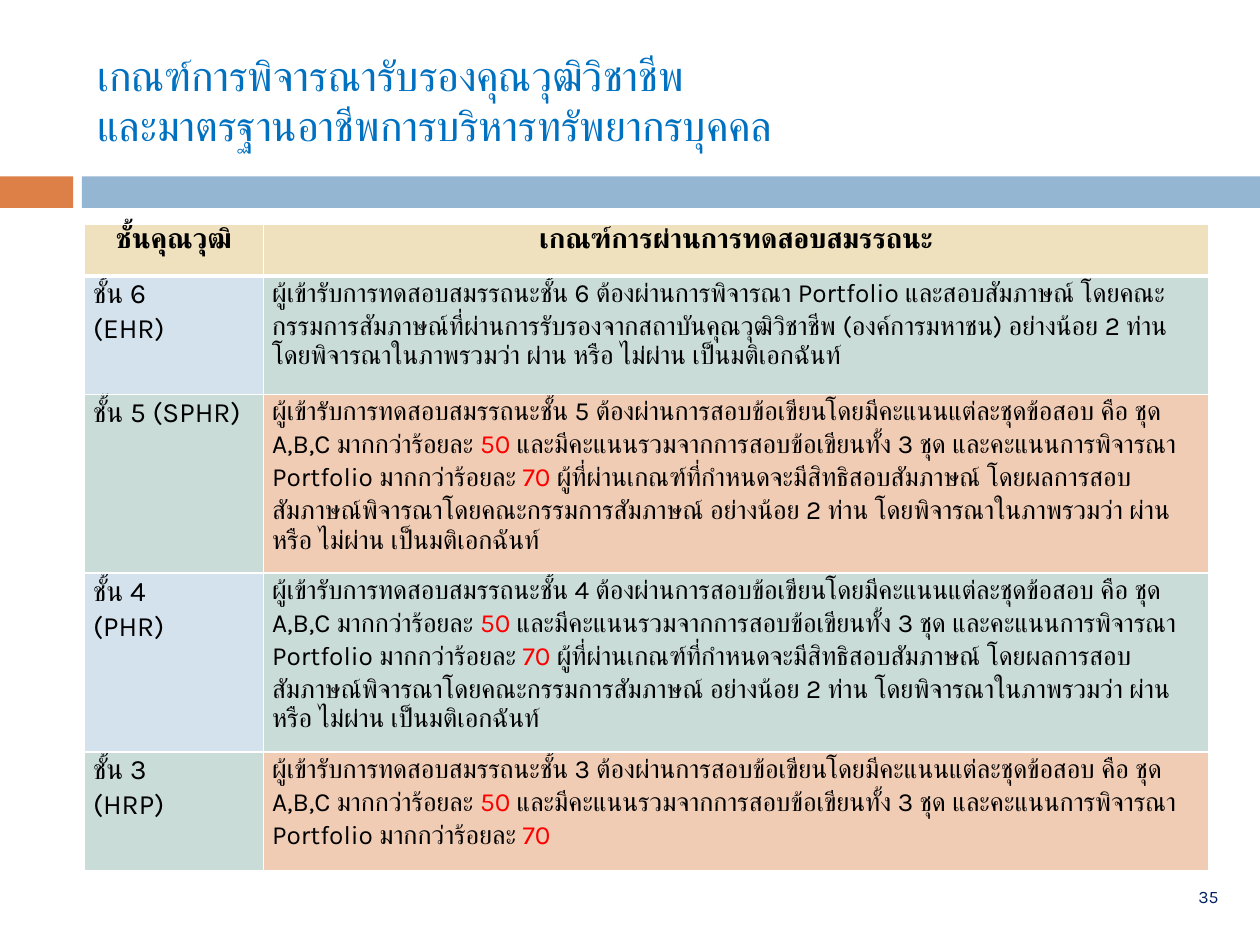
from lxml import etree
from pptx import Presentation
from pptx.dml.color import RGBColor
from pptx.enum.shapes import MSO_SHAPE
from pptx.enum.text import MSO_ANCHOR, PP_ALIGN
from pptx.oxml.ns import qn
from pptx.util import Inches, Pt

RECTANGLE = MSO_SHAPE.RECTANGLE
LEFT, CENTER = PP_ALIGN.LEFT, PP_ALIGN.CENTER
TOP, MIDDLE = MSO_ANCHOR.TOP, MSO_ANCHOR.MIDDLE

# Content: plain strings are black, ("...", "red") pairs are highlighted
TITLE_LINES = ["เกณฑ์การพิจารณารับรองคุณวุฒิวิชาชีพ", "และมาตรฐานอาชีพการบริหารทรัพยากรบุคคล"]
PAGE_NUMBER = "35"
HEADERS = ["ชั้นคุณวุฒิ", "เกณฑ์การผ่านการทดสอบสมรรถนะ"]
CANDIDATE = "ผู้เข้ารับการทดสอบสมรรถนะชั้น "
PANEL = "อย่างน้อย 2 ท่าน โดยพิจารณาในภาพรวมว่า ผ่าน หรือ ไม่ผ่าน เป็นมติเอกฉันท์"
PORTFOLIO_RULE = (" ต้องผ่านการพิจารณา Portfolio และสอบสัมภาษณ์ โดยคณะกรรมการสัมภาษณ์"
                  "ที่ผ่านการรับรองจากสถาบันคุณวุฒิวิชาชีพ (องค์การมหาชน) ")
WRITTEN_RULE = [
    " ต้องผ่านการสอบข้อเขียนโดยมีคะแนนแต่ละชุดข้อสอบ คือ ชุด A,B,C มากกว่าร้อยละ ",
    ("50 ", "red"),
    "และมีคะแนนรวมจากการสอบข้อเขียนทั้ง 3 ชุด และคะแนนการพิจารณา Portfolio มากกว่าร้อยละ ",
]
INTERVIEW_RULE = [
    ("70 ", "red"),
    "ผู้ที่ผ่านเกณฑ์ที่กำหนดจะมีสิทธิสอบสัมภาษณ์ โดยผลการสอบสัมภาษณ์พิจารณา"
    "โดยคณะกรรมการสัมภาษณ์ " + PANEL,
]
LEVELS = [
    (["ชั้น 6", "(EHR)"], [CANDIDATE + "6" + PORTFOLIO_RULE + PANEL]),
    (["ชั้น 5 (SPHR)"], [CANDIDATE + "5" + WRITTEN_RULE[0], *WRITTEN_RULE[1:], *INTERVIEW_RULE]),
    (["ชั้น 4", "(PHR)"], [CANDIDATE + "4" + WRITTEN_RULE[0], *WRITTEN_RULE[1:], *INTERVIEW_RULE]),
    (["ชั้น 3", "(HRP)"], [CANDIDATE + "3" + WRITTEN_RULE[0], *WRITTEN_RULE[1:], ("70", "red")]),
]

THEME = {
    "title": {"name": "TeX Gyre Adventor", "size": Pt(24), "bold": False, "color": "0070C0"},
    "header": {"name": "Karla", "size": Pt(16), "bold": True, "color": "000000"},
    "level": {"name": "Karla", "size": Pt(16), "bold": False, "color": "000000"},
    "criteria": {"name": "Karla", "size": Pt(15), "bold": False, "color": "000000"},
    "red": {"name": "Karla", "size": Pt(15), "bold": False, "color": "FF0000"},
    "page": {"name": "Karla", "size": Pt(10), "bold": False, "color": "002060"},
    "header_fill": "EFE0BE",
    "level_fills": ["D4E2ED", "CADCD8"],
    "criteria_fills": ["CADCD8", "F1CCB5"],
    "border": "FFFFFF",
}
BANDS = [(0, 0.58, "DD8047"), (0.65, 9.35, "94B6D2")]
BAND_TOP, BAND_HEIGHT = 1.4, 0.25
TABLE_LEFT, TABLE_TOP = 0.67, 1.78
COLUMN_WIDTHS = [1.42, 7.5]
ROW_HEIGHTS = [0.41, 0.94, 1.42, 1.42, 0.94]


def add_run(paragraph, text, style):
    run = paragraph.add_run()
    run.text = text
    for attribute, value in THEME[style].items():
        if attribute == "color":
            run.font.color.rgb = RGBColor.from_string(value)
        else:
            setattr(run.font, attribute, value)


def set_borders(cell, bottom_width):
    properties = cell._tc.get_or_add_tcPr()
    for side, width in (("L", 1), ("R", 1), ("T", 1), ("B", bottom_width)):
        line = etree.SubElement(properties, qn(f"a:ln{side}"), w=str(Pt(width)))
        fill = etree.SubElement(line, qn("a:solidFill"))
        etree.SubElement(fill, qn("a:srgbClr"), val=THEME["border"])


def fill_cell(cell, paragraphs, style, fill, align=LEFT, bottom_width=1):
    set_borders(cell, bottom_width)
    cell.fill.solid()
    cell.fill.fore_color.rgb = RGBColor.from_string(fill)
    margins = {"margin_left": 0.07, "margin_right": 0.07, "margin_top": 0, "margin_bottom": 0}
    for attribute, value in margins.items():
        setattr(cell, attribute, Inches(value))
    cell.vertical_anchor = TOP
    frame = cell.text_frame
    for index, pieces in enumerate(paragraphs):
        paragraph = frame.add_paragraph() if index else frame.paragraphs[0]
        paragraph.alignment = align
        paragraph.line_spacing = 1.07
        for piece in pieces:
            text, piece_style = (piece, style) if isinstance(piece, str) else piece
            add_run(paragraph, text, piece_style)


prs = Presentation()
prs.slide_width, prs.slide_height = Inches(10), Inches(7.5)
slide = prs.slides.add_slide(prs.slide_layouts[5])

# Title
title = slide.shapes.title
title.left, title.top, title.width, title.height = map(Inches, (0.67, 0.25, 8.92, 1.08))
title.text_frame.word_wrap = True
title.text_frame.vertical_anchor = MIDDLE
heading = title.text_frame.paragraphs[0]
heading.alignment = LEFT
for index, line_text in enumerate(TITLE_LINES):
    if index:
        heading.add_line_break()
    add_run(heading, line_text, "title")

# Bands under the title
for left, width, color in BANDS:
    band = slide.shapes.add_shape(RECTANGLE, *map(Inches, (left, BAND_TOP, width, BAND_HEIGHT)))
    band.shadow.inherit = False
    band.fill.solid()
    band.fill.fore_color.rgb = RGBColor.from_string(color)
    band.line.fill.background()

# Criteria table
table = slide.shapes.add_table(
    len(ROW_HEIGHTS), len(COLUMN_WIDTHS), Inches(TABLE_LEFT), Inches(TABLE_TOP),
    Inches(sum(COLUMN_WIDTHS)), Inches(sum(ROW_HEIGHTS))).table
for column, width in zip(table.columns, COLUMN_WIDTHS):
    column.width = Inches(width)
for row, height in zip(table.rows, ROW_HEIGHTS):
    row.height = Inches(height)
for column_index, header in enumerate(HEADERS):
    fill_cell(table.cell(0, column_index), [[header]], "header", THEME["header_fill"], CENTER, 3)
for index, (level, criteria) in enumerate(LEVELS):
    shade = index % 2
    fill_cell(table.cell(index + 1, 0), [[text] for text in level], "level",
              THEME["level_fills"][shade])
    fill_cell(table.cell(index + 1, 1), [criteria], "criteria", THEME["criteria_fills"][shade])

# Page number
page = slide.shapes.add_textbox(*map(Inches, (9.3, 6.98, 0.58, 0.27))).text_frame
page.word_wrap = True
page.vertical_anchor = MIDDLE
page.paragraphs[0].alignment = CENTER
add_run(page.paragraphs[0], PAGE_NUMBER, "page")

prs.save("out.pptx")
